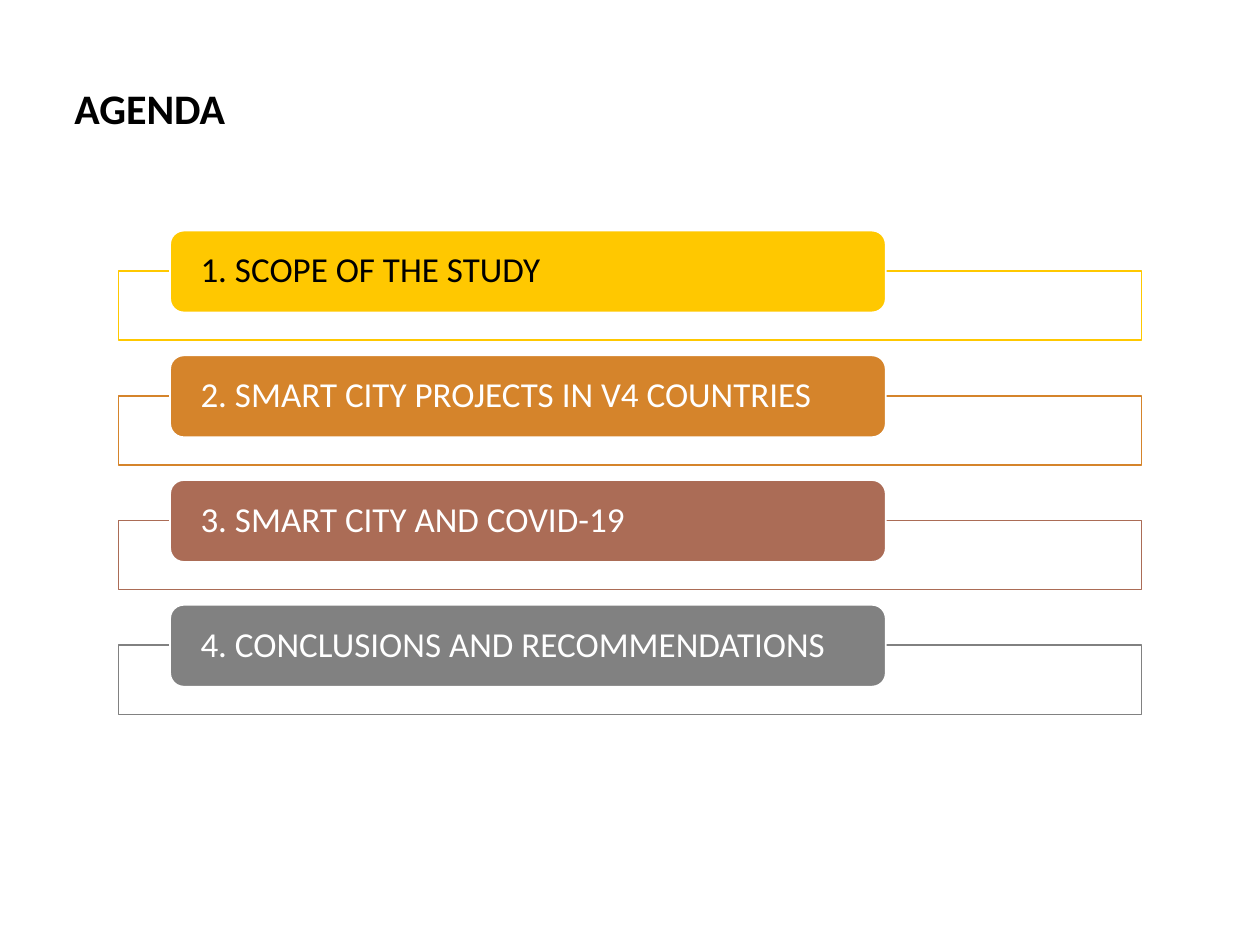
from lxml import etree
from pptx import Presentation
from pptx import util as u
from pptx.dml.color import RGBColor
from pptx.enum import shapes, text
from pptx.oxml.ns import qn


def color(value):
    return RGBColor.from_string(value)


def add_run(paragraph, content, size, value, bold=False):
    run = paragraph.add_run()
    run.text = content
    run.font.name = "Calibri"
    run.font.size = u.Pt(size)
    run.font.bold = bold
    run.font.color.rgb = color(value)


presentation = Presentation()
presentation.slide_width = u.Inches(10)
presentation.slide_height = u.Inches(7.5)
slide = presentation.slides.add_slide(presentation.slide_layouts[5])

title = slide.shapes.title
title.left, title.top = u.Inches(0.49), u.Inches(0.55)
title.width, title.height = u.Inches(9.24), u.Inches(0.51)
title.text_frame.vertical_anchor = text.MSO_ANCHOR.TOP
title.text_frame.auto_size = text.MSO_AUTO_SIZE.NONE
heading = title.text_frame.paragraphs[0]
heading.alignment = text.PP_ALIGN.LEFT
heading.line_spacing = 1.13
add_run(heading, "AGENDA", 24, "000000", bold=True)

agenda = [
    ("1. SCOPE OF THE STUDY", "FFC800", "000000"),
    ("2. SMART CITY PROJECTS IN V4 COUNTRIES", "D5842B", "FFFFFF"),
    ("3. SMART CITY AND COVID-19", "AB6C56", "FFFFFF"),
    ("4. CONCLUSIONS AND RECOMMENDATIONS", "818181", "FFFFFF"),
]
first_top, row_pitch = 1.83, 0.99

for index, (topic, accent, text_color) in enumerate(agenda):
    top = first_top + index * row_pitch

    frame = slide.shapes.add_shape(
        shapes.MSO_SHAPE.RECTANGLE,
        u.Inches(0.94), u.Inches(top + 0.32), u.Inches(8.12), u.Inches(0.55))
    frame.shadow.inherit = False
    frame.fill.solid()
    frame.fill.fore_color.rgb = color("FFFFFF")
    fill_color = frame.fill._xPr.find(qn("a:solidFill"))[0]
    etree.SubElement(fill_color, qn("a:alpha"), val="90000")
    frame.line.color.rgb = color(accent)
    frame.line.width = u.Pt(1)

    label = slide.shapes.add_shape(
        shapes.MSO_SHAPE.ROUNDED_RECTANGLE,
        u.Inches(1.35), u.Inches(top), u.Inches(5.68), u.Inches(0.65))
    label.shadow.inherit = False
    label.fill.solid()
    label.fill.fore_color.rgb = color(accent)
    label.line.color.rgb = color("FFFFFF")
    label.line.width = u.Pt(1)

    text_frame = label.text_frame
    text_frame.word_wrap = True
    text_frame.vertical_anchor = text.MSO_ANCHOR.MIDDLE
    text_frame.margin_left = text_frame.margin_right = u.Inches(0.21)
    text_frame.margin_top = text_frame.margin_bottom = u.Inches(0)
    paragraph = text_frame.paragraphs[0]
    paragraph.alignment = text.PP_ALIGN.LEFT
    paragraph.line_spacing = 0.9
    add_run(paragraph, topic, 20, text_color)

presentation.save("out.pptx")
